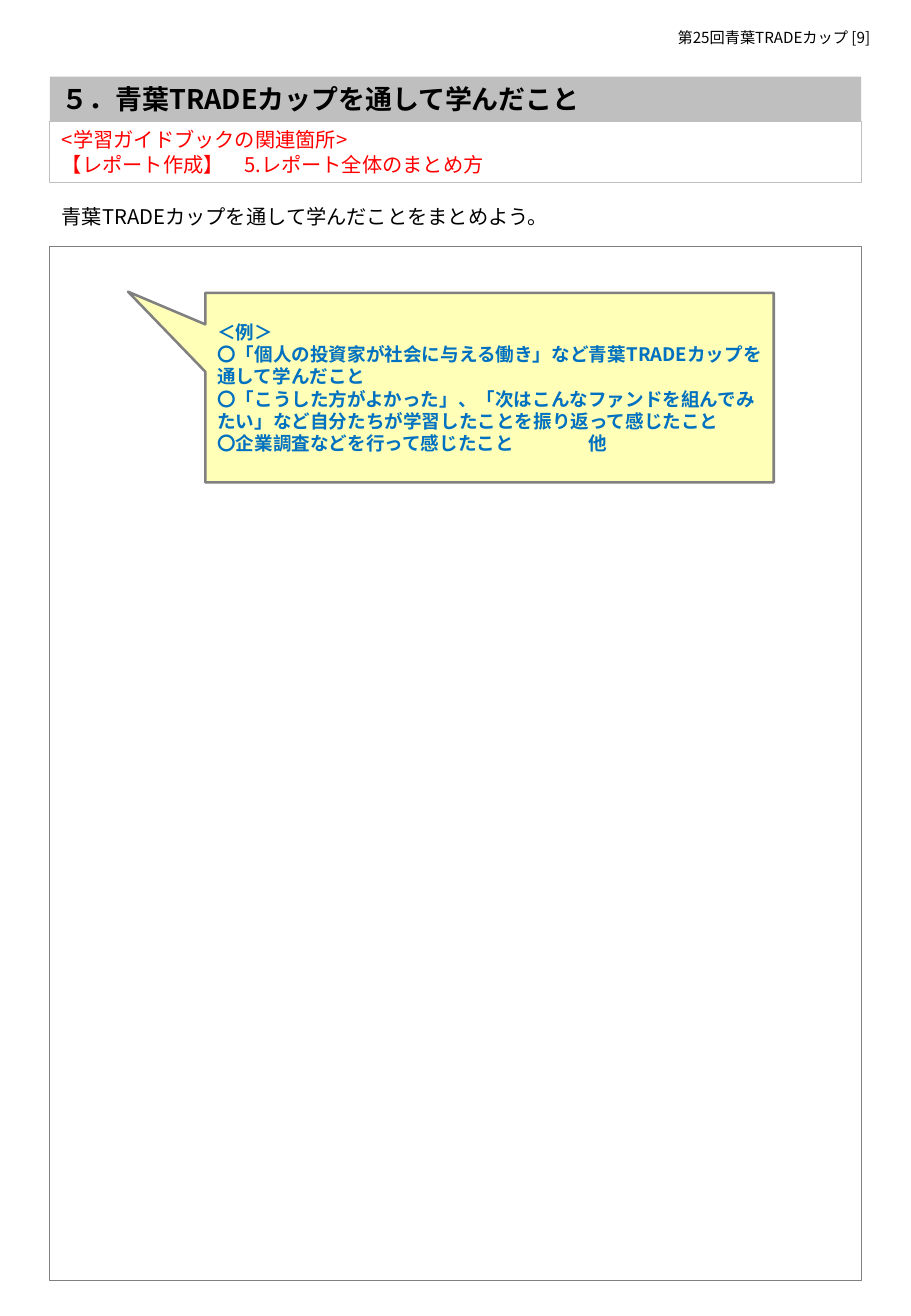
from dataclasses import dataclass
from typing import Any

from lxml.etree import SubElement
from pptx import Presentation
from pptx.dml.color import RGBColor
from pptx.enum.shapes import MSO_SHAPE
from pptx.enum.text import MSO_ANCHOR, MSO_AUTO_SIZE, PP_ALIGN
from pptx.oxml.ns import qn
from pptx.util import Inches, Pt

FONT = "Noto Sans CJK JP"
EVENT = "青葉TRADEカップ"
LEFT, WIDTH = 0.41, 6.68  # shared column, in inches
GAP = "|"  # marks a wide gap within a line


@dataclass
class Box:
    top: float
    height: float
    lines: tuple[str, ...] = ()
    size: float = 12
    ink: str = "000000"
    bold: bool = False
    fill: str = ""
    edge: str = ""
    weight: float = 0.75
    align: PP_ALIGN = PP_ALIGN.LEFT
    anchor: MSO_ANCHOR = MSO_ANCHOR.TOP
    left: float = LEFT
    width: float = WIDTH


HEAD = Box(0.18, 0.25, (f"第25回{EVENT} [9]",), 9, left=5.48, width=2.02)
TITLE = Box(0.63, 0.37, (f"５．{EVENT}を通して学んだこと",), 16, bold=True,
            fill="BFBFBF")
GUIDE = Box(1, 0.5, ("<学習ガイドブックの関連箇所>",
                     "【レポート作成】　5.レポート全体のまとめ方"),
            ink="FF0000", edge="BFBFBF", align=PP_ALIGN.JUSTIFY)
TASK = Box(1.63, 0.3, (f"{EVENT}を通して学んだことをまとめよう。",),
           align=PP_ALIGN.JUSTIFY)
FRAME = Box(2.03, 8.51, edge="808080", weight=0.5)
HINT = Box(2.41, 1.56, (
    "＜例＞",
    f"〇「個人の投資家が社会に与える働き」など{EVENT}を通して学んだこと",
    "〇「こうした方がよかった」、「次はこんなファンドを組んでみたい」など"
    "自分たちが学習したことを振り返って感じたこと",
    f"〇企業調査などを行って感じたこと{GAP}他"),
    11, "0070C0", True, "FFFFB7", "808080", 1.5,
    anchor=MSO_ANCHOR.MIDDLE, left=1.69, width=4.68)


def tint(code: str) -> RGBColor:
    return RGBColor.from_string(code)


def area(box: Box) -> tuple[int, ...]:
    return tuple(Inches(n) for n in (box.left, box.top, box.width, box.height))


def fill_line(para: Any, line: str, size: float) -> None:
    start, gap, end = line.partition(GAP)
    para.add_run().text = start
    if gap:
        # One full-width space, tracked out by three more characters
        space = para.add_run()
        space.text = "　"
        space._r.get_or_add_rPr().set("spc", str(int(size * 300)))
        para.add_run().text = end


def write(shape: Any, box: Box) -> None:
    frame = shape.text_frame
    frame.word_wrap = True
    frame.auto_size = MSO_AUTO_SIZE.NONE
    frame.vertical_anchor = box.anchor
    for i, line in enumerate(box.lines):
        para = frame.add_paragraph() if i else frame.paragraphs[0]
        fill_line(para, line, box.size)
        para.alignment = box.align
        para.space_before = Pt(0)
        font = para.font
        font.name, font.size, font.bold = FONT, Pt(box.size), box.bold
        font.color.rgb = tint(box.ink)
        # East Asian typeface, and no bullet or indent
        props = para._p.pPr
        props.set("marL", "0")
        props.set("indent", "0")
        base = props.find(qn("a:defRPr"))
        SubElement(base, qn("a:ea")).set("typeface", FONT)
        base.addprevious(props.makeelement(qn("a:buNone")))


def style(shape: Any, box: Box) -> None:
    shape.left, shape.top, shape.width, shape.height = area(box)
    if box.fill:
        shape.fill.solid()
        shape.fill.fore_color.rgb = tint(box.fill)
    else:
        shape.fill.background()
    if box.edge:
        shape.line.color.rgb = tint(box.edge)
        shape.line.width = Pt(box.weight)
    else:
        shape.line.fill.background()
    write(shape, box)


def main() -> None:
    deck = Presentation()
    deck.slide_width, deck.slide_height = Inches(7.5), Inches(10.83)
    slide = deck.slides.add_slide(deck.slide_layouts[1])
    shapes = slide.shapes

    # Title and guide reference
    style(shapes.title, TITLE)
    style(slide.placeholders[1], GUIDE)

    # Page header and task
    for box in (HEAD, TASK):
        style(shapes.add_textbox(*area(box)), box)

    # Answer frame and example callout
    for kind, box in ((MSO_SHAPE.RECTANGLE, FRAME),
                      (MSO_SHAPE.RECTANGULAR_CALLOUT, HINT)):
        shape = shapes.add_shape(kind, *area(box))
        shape.shadow.inherit = False
        style(shape, box)
    shape.adjustments[0], shape.adjustments[1] = -0.636, -0.506

    deck.save("out.pptx")


if __name__ == "__main__":
    main()
